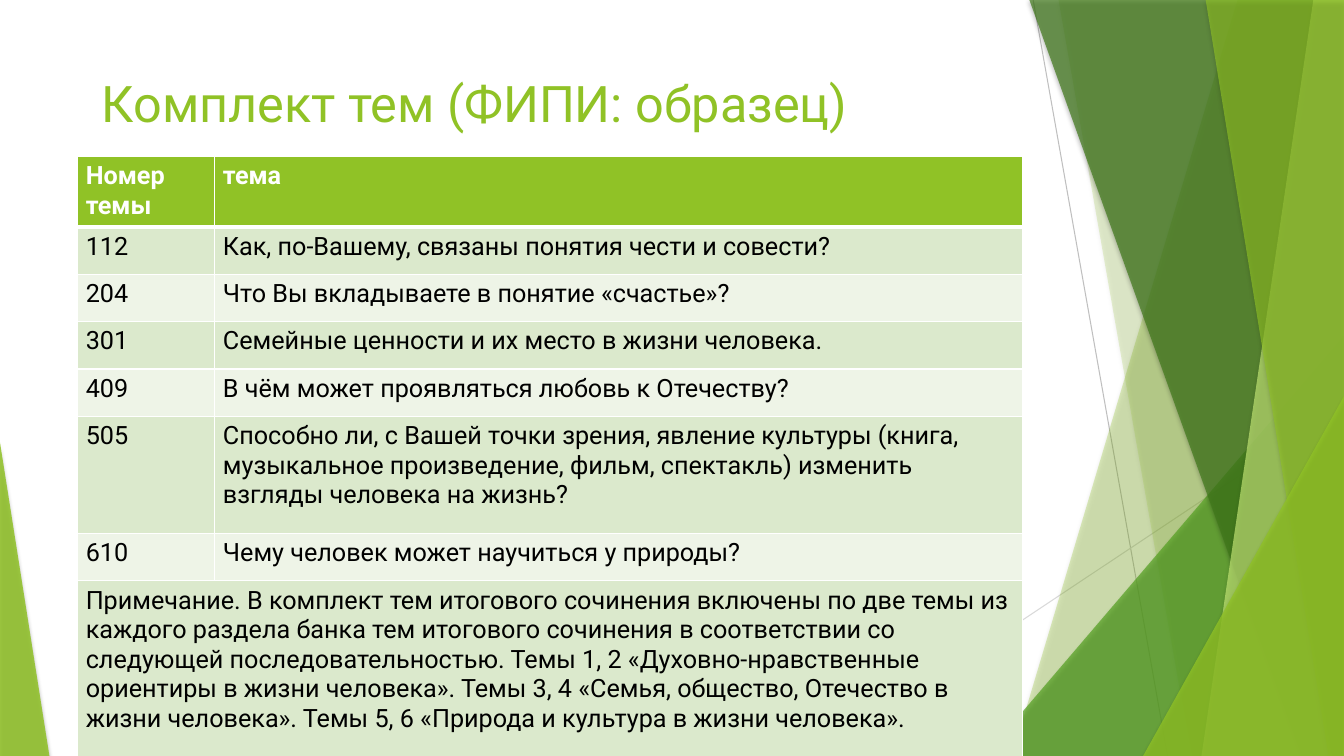
from lxml import etree
from pptx import Presentation
from pptx.dml.color import RGBColor
from pptx.enum.shapes import MSO_CONNECTOR, MSO_SHAPE
from pptx.enum.text import MSO_ANCHOR
from pptx.oxml import parse_xml
from pptx.util import Pt

LINE = MSO_CONNECTOR.STRAIGHT
WEDGE = MSO_SHAPE.RIGHT_TRIANGLE
TRI = MSO_SHAPE.ISOSCELES_TRIANGLE
TOP = MSO_ANCHOR.TOP
NS = "http://schemas.openxmlformats.org/drawingml/2006/main"
FONT = "Roboto"
WIDE, HIGH = 960, 540
HEX = {
    "lime": "90C226", "green": "54A021", "dark": "3F7819", "pale": "C0E474",
    "gray": "BFBFBF", "light": "D9D9D9", "white": "FFFFFF", "black": "000000",
    "odd": "DBE9CC", "even": "EEF4E7",
}


def style(item, size, color, bold=False):
    """Set the font of a paragraph."""
    item.font.name = FONT
    item.font.size = Pt(size)
    item.font.bold = bold
    item.font.color.rgb = RGBColor.from_string(HEX[color])


def edge(cell, side, width):
    """Add a white border to one side of a cell."""
    props = cell._tc.get_or_add_tcPr()
    line = parse_xml(
        f'<a:{side} xmlns:a="{NS}" w="{Pt(width)}"><a:solidFill>'
        f'<a:srgbClr val="{HEX["white"]}"/></a:solidFill></a:{side}>')
    props.append(line)


deck = Presentation()
deck.slide_width, deck.slide_height = Pt(WIDE), Pt(HIGH)
slide = deck.slides.add_slide(deck.slide_layouts[6])
shapes = slide.shapes

# Thin lines behind the panels
for x1, y1, x2, y2, color in [
    (738, 0, 834, HIGH, "gray"),
    (WIDE, 290, 584.6, HIGH, "light"),
]:
    line = shapes.add_connector(LINE, Pt(x1), Pt(y1), Pt(x2), Pt(y2))
    line.line.width = Pt(0.75)
    line.line.color.rgb = RGBColor.from_string(HEX[color])
    etree.SubElement(line._element.spPr, f"{{{NS}}}effectLst")

# Two numbers: top and bottom x of a panel reaching the right edge.
# Four numbers: left, top, width and apex position of a triangle.
panels = [
    ("lime", 30, (884.2, 722.9)),
    ("lime", 20, (756, 851)),
    ("green", 72, (703.4, 239.8, 256.6, 1)),
    ("dark", 70, (735.1, 929.5)),
    ("pale", 70, (938.2, 858.2)),
    ("lime", 65, (861.1, 949)),
    ("lime", 80, (816.5, 283, 143.5, 1)),
    ("lime", 85, (0, 316.1, 35.3, 0)),
]
for color, alpha, form in panels:
    if len(form) == 2:
        start, end = form
        path = shapes.build_freeform(Pt(start), Pt(-0.6))
        path.add_line_segments([
            (Pt(WIDE), Pt(-0.6)), (Pt(WIDE), Pt(HIGH)), (Pt(end), Pt(HIGH))])
        panel = path.convert_to_shape()
    else:
        left, top, width, apex = form
        panel = shapes.add_shape(TRI, Pt(left), Pt(top), Pt(width), Pt(HIGH - top))
        panel.adjustments[0] = apex
    panel.line.fill.background()
    panel.fill.solid()
    panel.fill.fore_color.rgb = RGBColor.from_string(HEX[color])
    props = panel._element.spPr
    tint = props.find(f"{{{NS}}}solidFill")[0]
    etree.SubElement(tint, f"{{{NS}}}alpha", val=str(alpha * 1000))
    props.append(parse_xml(
        f'<a:effectLst xmlns:a="{NS}"><a:outerShdw blurRad="{Pt(3)}" '
        f'dist="{Pt(2)}" dir="5400000" rotWithShape="0">'
        f'<a:srgbClr val="{HEX["black"]}"><a:alpha val="35000"/></a:srgbClr>'
        '</a:outerShdw></a:effectLst>'))

# Title
title = shapes.add_textbox(Pt(65.5), Pt(48.2), Pt(664.6), Pt(63.4)).text_frame
title.word_wrap = True
title.vertical_anchor = TOP
title.text = "Комплект тем (ФИПИ: образец)"
style(title.paragraphs[0], 36, "lime")

# Table of themes
rows = [
    ("Номер темы", "тема", 49),
    ("112", "Как, по-Вашему, связаны понятия чести и совести?", 33.9),
    ("204", "Что Вы вкладываете в понятие «счастье»?", 33.9),
    ("301", "Семейные ценности и их место в жизни человека.", 33.9),
    ("409", "В чём может проявляться любовь к Отечеству?", 33.9),
    ("505", "Способно ли, с Вашей точки зрения, явление культуры (книга, "
     "музыкальное произведение, фильм, спектакль) изменить взгляды "
     "человека на жизнь?", 83.5),
    ("610", "Чему человек может научиться у природы?", 33.9),
    ("Примечание. В комплект тем итогового сочинения включены по две темы "
     "из каждого раздела банка тем итогового сочинения в соответствии со "
     "следующей последовательностью. Темы 1, 2 «Духовно-нравственные "
     "ориентиры в жизни человека». Темы 3, 4 «Семья, общество, Отечество в "
     "жизни человека». Темы 5, 6 «Природа и культура в жизни человека».",
     "", 133.9),
]
tall = sum(row[2] for row in rows)
table = shapes.add_table(
    len(rows), 2, Pt(55.5), Pt(111.5), Pt(674.6), Pt(tall)).table
table.columns[0].width, table.columns[1].width = Pt(98), Pt(576.6)
last = len(rows) - 1
table.cell(last, 0).merge(table.cell(last, 1))

for r, (code, theme, height) in enumerate(rows):
    table.rows[r].height = Pt(height)
    head = r == 0
    fill = "lime" if head else "odd" if r % 2 else "even"
    for c, text in enumerate((code, theme)):
        cell = table.cell(r, c)
        cell.margin_left = cell.margin_right = Pt(5.8)
        cell.margin_top = cell.margin_bottom = Pt(3.6)
        for side in ("lnL", "lnR", "lnT", "lnB"):
            thick = (head and side == "lnB") or (r == 1 and side == "lnT")
            edge(cell, side, 3 if thick else 0.96)
        cell.fill.solid()
        cell.fill.fore_color.rgb = RGBColor.from_string(HEX[fill])
        if text:
            cell.text = text
            style(cell.text_frame.paragraphs[0], 18,
                  "white" if head else "black", head)

deck.save("out.pptx")
